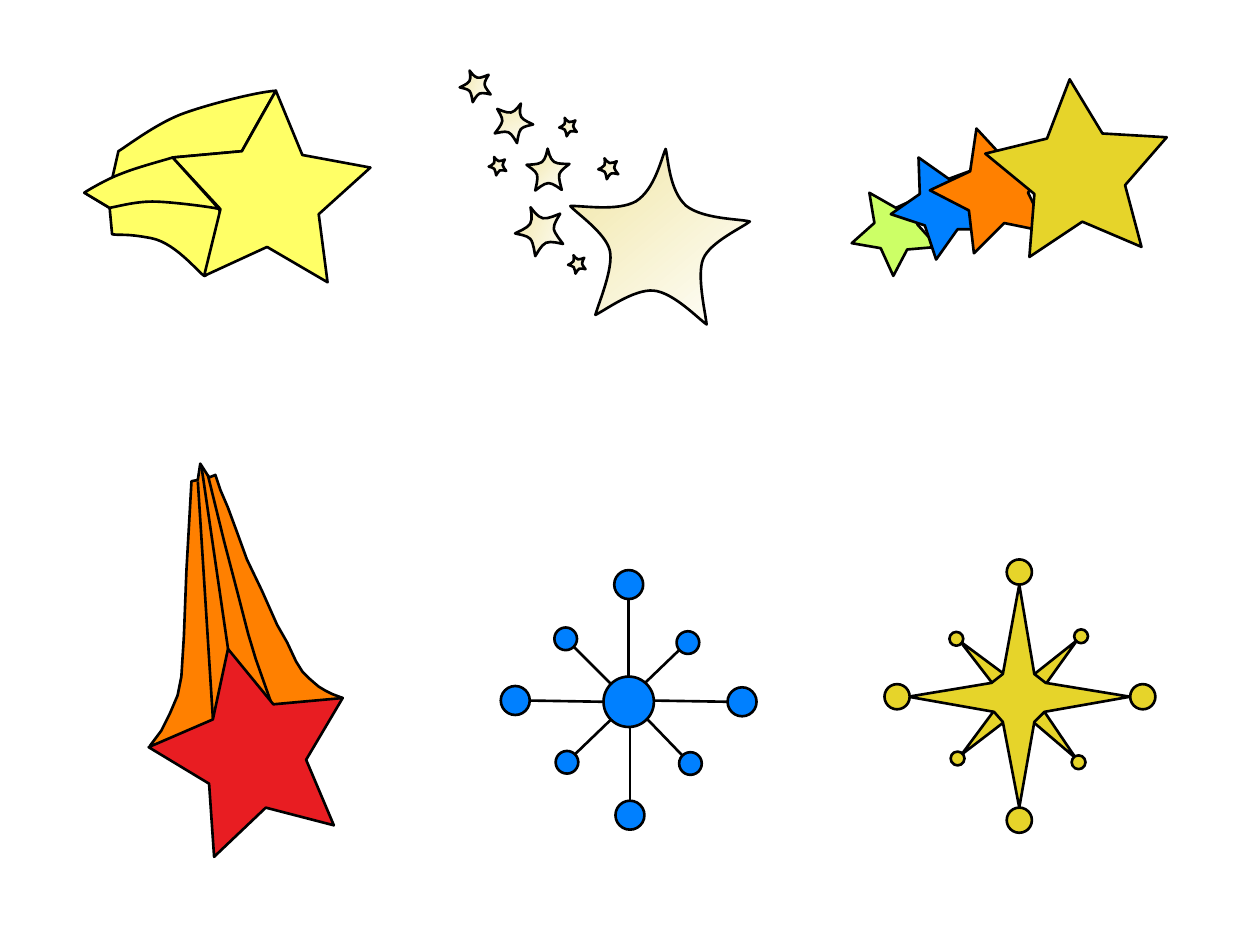
"""Build a slide with six star drawings."""
from math import cos, radians, sin

from lxml import etree
from pptx import Presentation
from pptx.dml.color import RGBColor
from pptx.enum.shapes import MSO_CONNECTOR, MSO_SHAPE
from pptx.oxml.ns import qn
from pptx.util import Inches, Pt

STRAIGHT = MSO_CONNECTOR.STRAIGHT
ELLIPSE = MSO_SHAPE.OVAL
COLORS = {
    "line": "000000", "lime": "CCFF66", "blue": "0080FF", "orange": "FF8000",
    "gold": "E6D42A", "red": "E81D22", "yellow": "FFFF66",
    "cream": "F0E5A1", "white": "FFFFFF",
}
HALF_STAR = [
    (0.5, 0), (0.52, 0.06), (0.54, 0.24), (0.64, 0.32), (0.74, 0.39), (0.94, 0.37),
    (1, 0.38), (0.96, 0.42), (0.79, 0.52), (0.76, 0.62), (0.73, 0.72), (0.8, 0.94),
    (0.81, 1), (0.76, 0.97), (0.61, 0.83), (0.5, 0.83),
]


def rgb(name):
    """Look up a colour by name."""
    return RGBColor.from_string(COLORS[name])


def style(shape, color):
    """Give a shape its fill and black outline."""
    shape.shadow.inherit = False
    shape.line.color.rgb = rgb("line")
    shape.line.width = Pt(1.5)
    if color is None:
        shape.fill.background()
    elif color == "cream":
        shape.fill.gradient()
        shape.fill.gradient_angle = 315
        for stop, (name, position) in zip(shape.fill.gradient_stops, [("cream", 0), ("white", 1)]):
            stop.color.rgb = rgb(name)
            stop.position = position
    else:
        shape.fill.solid()
        shape.fill.fore_color.rgb = rgb(color)


def turn(point, angle, center=(0, 0)):
    """Turn a point clockwise about a center."""
    c, s = cos(radians(angle)), sin(radians(angle))
    dx, dy = point[0] - center[0], point[1] - center[1]
    return center[0] + c * dx - s * dy, center[1] + s * dx + c * dy


def level(points, angle):
    """Return the points as they lie before the shape is rotated."""
    xs, ys = zip(*(turn(point, -angle) for point in points))
    center = turn(((min(xs) + max(xs)) / 2, (min(ys) + max(ys)) / 2), angle)
    return [turn(point, -angle, center) for point in points]


def bend(outline, segments):
    """Merge the line nodes of each six-number segment into a cubic curve."""
    path = outline._element.find(".//" + qn("a:path"))
    nodes = iter(path.findall(qn("a:lnTo")))
    for segment in segments:
        node = next(nodes)
        if len(segment) == 6:
            curve = etree.Element(qn("a:cubicBezTo"))
            path.replace(node, curve)
            curve.append(node[0])
            for _ in range(2):
                extra = next(nodes)
                curve.append(extra[0])
                path.remove(extra)


def draw_outline(shapes, segments, color=None, angle=0, close=True):
    """Draw an outline of line ends (2 numbers) and cubic curves (6 numbers)."""
    points = [pair for seg in segments for pair in zip(seg[::2], seg[1::2])]
    start, *rest = [(Inches(x), Inches(y)) for x, y in level(points, angle)]
    builder = shapes.build_freeform(*start, scale=1.0)
    builder.add_line_segments(rest, close=close)
    outline = builder.convert_to_shape()
    bend(outline, segments[1:])
    outline.rotation = angle
    style(outline, color)


def draw_circle(shapes, x, y, size, color, angle=0):
    """Draw a circle about its center."""
    circle = shapes.add_shape(ELLIPSE, Inches(x - size / 2), Inches(y - size / 2),
                              Inches(size), Inches(size))
    circle.rotation = angle
    style(circle, color)


def draw_spoke(shapes, *ends):
    """Draw a straight black connector."""
    spoke = shapes.add_connector(STRAIGHT, *map(Inches, ends))
    spoke.line.color.rgb = rgb("line")
    spoke.line.width = Pt(1.5)
    etree.SubElement(spoke._element.spPr, qn("a:effectLst"))


def draw_soft_star(shapes, left, top, width, height, angle):
    """Draw a curved five-pointed star inside a box, then rotate it."""
    unit = HALF_STAR + [(1 - x, y) for x, y in HALF_STAR[-2::-1]]
    points = [(left + x * width, top + y * height) for x, y in unit]
    curves = [sum(points[i:i + 3], ()) for i in range(1, len(points), 3)]
    center = (left + width / 2, top + height / 2)
    turned = []
    for segment in [points[0]] + curves:
        pairs = zip(segment[::2], segment[1::2])
        turned.append(sum((turn(pair, angle, center) for pair in pairs), ()))
    draw_outline(shapes, turned, "cream", angle)


def draw_star_row(slide):
    """Draw four overlapping stars of growing size."""
    draw_outline(slide.shapes, [
        (7.33, 1.55), (7.11, 1.65), (6.9, 1.53), (6.94, 1.77), (6.76, 1.93), (6.99, 1.97),
        (7.09, 2.19), (7.2, 1.98), (7.44, 1.96), (7.28, 1.78)], "lime", 2.4)
    shapes = slide.shapes.add_group_shape().shapes
    draw_outline(shapes, [
        (7.8, 1.32), (7.53, 1.42), (7.29, 1.25), (7.3, 1.54), (7.07, 1.7), (7.34, 1.79),
        (7.43, 2.06), (7.6, 1.82), (7.88, 1.82), (7.71, 1.6)], "blue", 1.1)
    draw_outline(shapes, [
        (8.33, 1.23), (7.99, 1.28), (7.75, 1.02), (7.7, 1.36), (7.38, 1.51), (7.69, 1.67),
        (7.73, 2.01), (7.97, 1.77), (8.31, 1.84), (8.16, 1.53)], "orange", 3.4)
    draw_outline(shapes, [
        (9.26, 1.09), (8.75, 1.06), (8.49, 0.63), (8.31, 1.1), (7.82, 1.22), (8.21, 1.54),
        (8.17, 2.04), (8.59, 1.76), (9.06, 1.96), (8.93, 1.47)], "gold", 3.6)


def draw_falling_star(shapes):
    """Draw the red star with its orange tail."""
    draw_outline(shapes, [
        (1.19, 5.92), (1.28, 5.8), (1.35, 5.66), (1.41, 5.52), (1.44, 5.37), (1.46, 5.05),
        (1.48, 4.53), (1.52, 3.82), (1.57, 3.81), (1.59, 3.68), (1.66, 3.79), (1.71, 3.77),
        (1.75, 3.89), (1.81, 4.03), (1.88, 4.22), (1.96, 4.44), (2.08, 4.69), (2.2, 4.96),
        (2.28, 5.1), (2.35, 5.25), (2.4, 5.33), (2.46, 5.39), (2.53, 5.45), (2.58, 5.48),
        (2.64, 5.51), (2.72, 5.54)], "orange")
    for crease in ([(1.81, 5.15), (1.6, 3.71)],
                   [(2.15, 5.57), (2.03, 5.23), (1.97, 5.03), (1.89, 4.72), (1.78, 4.3), (1.65, 3.77)],
                   [(1.69, 5.71), (1.57, 3.82)]):
        draw_outline(shapes, crease, close=False)
    draw_outline(shapes, [
        (1.81, 5.15), (2.17, 5.59), (2.72, 5.54), (2.43, 6.03), (2.65, 6.55), (2.11, 6.41),
        (1.7, 6.8), (1.66, 6.22), (1.18, 5.93), (1.69, 5.71)], "red")


def draw_compass(shapes):
    """Draw the gold compass star with balls on its points."""
    for ray in ([(8.54, 6.02), (8.2, 5.73), (8.29, 5.65)], [(8.21, 5.35), (8.3, 5.43), (8.55, 5.08)],
                [(7.89, 5.44), (7.97, 5.35), (7.62, 5.09)], [(7.89, 5.64), (7.63, 5.99), (7.97, 5.73)]):
        draw_outline(shapes, ray, "gold")
    draw_outline(shapes, [
        (8.09, 4.64), (7.96, 5.35), (7.87, 5.42), (7.21, 5.53), (7.89, 5.65), (7.96, 5.73),
        (8.09, 6.41), (8.21, 5.73), (8.29, 5.65), (8.97, 5.53), (8.3, 5.42), (8.21, 5.35)], "gold")
    for x, y in [(9.07, 5.53), (8.09, 6.51), (7.12, 5.53), (8.09, 4.54)]:
        draw_circle(shapes, x, y, 0.2, "gold")
    for x, y in [(8.56, 6.05), (8.58, 5.05), (7.59, 5.07), (7.6, 6.02)]:
        draw_circle(shapes, x, y, 0.11, "gold")


def draw_stardust(shapes):
    """Draw the large soft star and its trail of small ones."""
    for star in [(4.51, 1.18, 1.43, 1.36, 4.9), (4.09, 1.63, 0.39, 0.37, 336.4),
                 (4.18, 1.18, 0.34, 0.33, 358.8), (3.92, 0.81, 0.31, 0.3, 23.4),
                 (3.65, 0.55, 0.25, 0.24, 336.4), (3.88, 1.24, 0.14, 0.14, 336.4),
                 (4.51, 2.02, 0.14, 0.14, 336.4), (4.75, 1.25, 0.16, 0.16, 336.4),
                 (4.44, 0.93, 0.14, 0.14, 336.4)]:
        draw_soft_star(shapes, *star)


def draw_hub(shapes):
    """Draw the blue hub with eight spokes and balls."""
    for ends in [(4.2, 5.56, 4.79, 5.57), (4.99, 5.37, 4.99, 4.75), (5, 5.77, 5, 6.35),
                 (5.18, 5.56, 5.78, 5.57), (4.85, 5.43, 4.55, 5.13), (5.12, 5.42, 5.39, 5.16),
                 (4.57, 5.98, 4.85, 5.71), (5.42, 6, 5.13, 5.7)]:
        draw_spoke(shapes, *ends)
    draw_circle(shapes, 4.99, 5.57, 0.4, "blue")
    for x, y in [(4.99, 4.64), (5.89, 5.57), (5, 6.47), (4.09, 5.56)]:
        draw_circle(shapes, x, y, 0.23, "blue")
    for x, y in [(5.46, 5.1), (5.48, 6.06), (4.5, 6.05), (4.49, 5.07)]:
        draw_circle(shapes, x, y, 0.18, "blue", 314.1)


def draw_shooting_star(shapes):
    """Draw the yellow star with its folded ribbon tail."""
    draw_outline(shapes, [
        (1.63, 2.19), (1.61, 2.21, 1.41, 1.93, 1.2, 1.89), (0.99, 1.85, 0.95, 1.87, 0.89, 1.86),
        (0.87, 1.65), (0.67, 1.53), (0.89, 1.42), (0.94, 1.2),
        (1.02, 1.15, 1.23, 0.99, 1.43, 0.91), (1.61, 0.84, 2.03, 0.73, 2.19, 0.72),
        (2.05, 0.96, 1.92, 1.2, 1.92, 1.2), (1.37, 1.25), (1.74, 1.66),
        (1.79, 1.82, 1.63, 2.19, 1.63, 2.19)], "yellow")
    draw_outline(shapes, [
        (2.94, 1.33), (2.4, 1.23), (2.19, 0.72), (1.92, 1.2), (1.37, 1.25), (1.75, 1.66),
        (1.62, 2.19), (2.12, 1.96), (2.6, 2.24), (2.53, 1.7)], "yellow")
    draw_outline(shapes, [
        (0.87, 1.65), (0.93, 1.64, 1.07, 1.6, 1.21, 1.6), (1.36, 1.6, 1.73, 1.65, 1.74, 1.66),
        (1.37, 1.25), (1.31, 1.27, 1.08, 1.33, 0.96, 1.38),
        (0.85, 1.42, 0.68, 1.52, 0.67, 1.53)], "yellow")


def main():
    """Build and save the slide."""
    prs = Presentation()
    prs.slide_width, prs.slide_height = Inches(10), Inches(7.5)
    slide = prs.slides.add_slide(prs.slide_layouts[6])
    draw_star_row(slide)
    for draw in (draw_falling_star, draw_compass, draw_stardust, draw_hub, draw_shooting_star):
        draw(slide.shapes.add_group_shape().shapes)
    prs.save("out.pptx")


if __name__ == "__main__":
    main()
